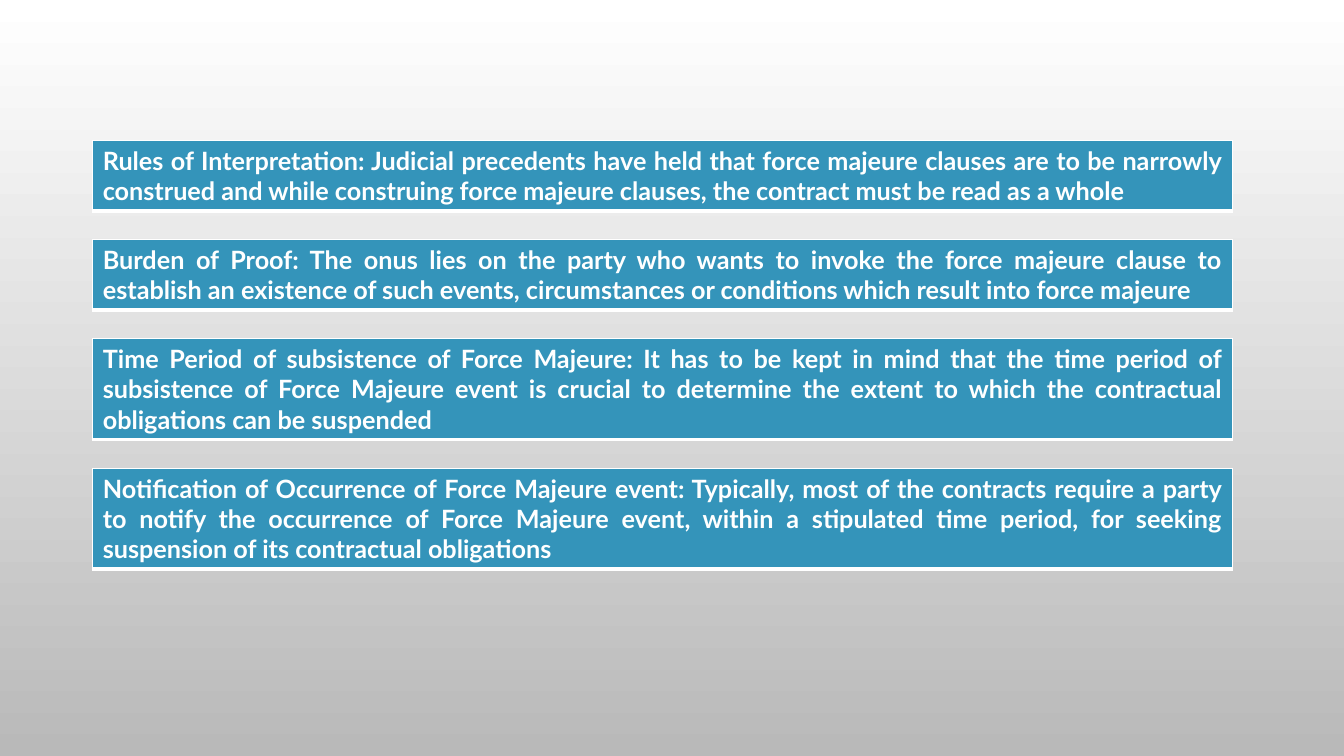
from lxml.etree import SubElement
from pptx import Presentation
from pptx.dml.color import RGBColor as Rgb
from pptx.enum.text import PP_ALIGN as Align
from pptx.oxml.ns import qn
from pptx.util import Inches, Pt

COLORS = {"top": "FFFFFF", "bottom": "B9B9B9", "panel": "3494BA", "text": "FFFFFF", "border": "FFFFFF"}
BORDER_WIDTHS = {"L": 1, "R": 1, "T": 1, "B": 3}
LEFT, FIRST_TOP, WIDTH, GAP = 0.92, 1.39, 11.3, 0.285
TWO_LINES, THREE_LINES = 0.7, 1.0
CLAUSES = [
    (TWO_LINES, "Rules of Interpretation: Judicial precedents have held that force majeure clauses are to be "
     "narrowly construed and while construing force majeure clauses, the contract must be read as a whole"),
    (TWO_LINES, "Burden of Proof: The onus lies on the party who wants to invoke the force majeure clause to "
     "establish an existence of such events, circumstances or conditions which result into force majeure"),
    (THREE_LINES, "Time Period of subsistence of Force Majeure: It has to be kept in mind that the time period of "
     "subsistence of Force Majeure event is crucial to determine the extent to which the contractual "
     "obligations can be suspended"),
    (THREE_LINES, "Notification of Occurrence of Force Majeure event: Typically, most of the contracts require a "
     "party to notify the occurrence of Force Majeure event, within a stipulated time period, for seeking "
     "suspension of its contractual obligations"),
]


def color(name):
    """Return the named colour."""
    return Rgb.from_string(COLORS[name])


def paint_background(slide):
    """Fill the slide with a gradient running from top to bottom."""
    fill = slide.background.fill
    fill.gradient()
    fill.gradient_angle = 270
    for stop, name in zip(fill.gradient_stops, ("top", "bottom")):
        stop.color.rgb = color(name)


def add_borders(cell):
    """Draw the four cell borders, the bottom one thicker."""
    properties = cell._tc.get_or_add_tcPr()
    for side, width in BORDER_WIDTHS.items():
        line = SubElement(properties, qn(f"a:ln{side}"), w=str(Pt(width)))
        fill = SubElement(line, qn("a:solidFill"))
        SubElement(fill, qn("a:srgbClr"), val=COLORS["border"])


def add_clause(slide, top, height, text):
    """Add a one-cell table holding a justified clause."""
    table = slide.shapes.add_table(1, 1, Inches(LEFT), Inches(top), Inches(WIDTH), Inches(height)).table
    cell = table.cell(0, 0)
    add_borders(cell)
    cell.fill.solid()
    cell.fill.fore_color.rgb = color("panel")
    cell.text_frame.text = text
    paragraph = cell.text_frame.paragraphs[0]
    paragraph.alignment = Align.JUSTIFY
    font = paragraph.runs[0].font
    font.name, font.size, font.bold = "Lato", Pt(18), True
    font.color.rgb = color("text")


def main():
    """Build and save the slide."""
    presentation = Presentation()
    presentation.slide_width, presentation.slide_height = Inches(13.33), Inches(7.5)
    slide = presentation.slides.add_slide(presentation.slide_layouts[6])
    paint_background(slide)
    top = FIRST_TOP
    for height, text in CLAUSES:
        add_clause(slide, top, height, text)
        top += height + GAP
    presentation.save("out.pptx")


if __name__ == "__main__":
    main()
